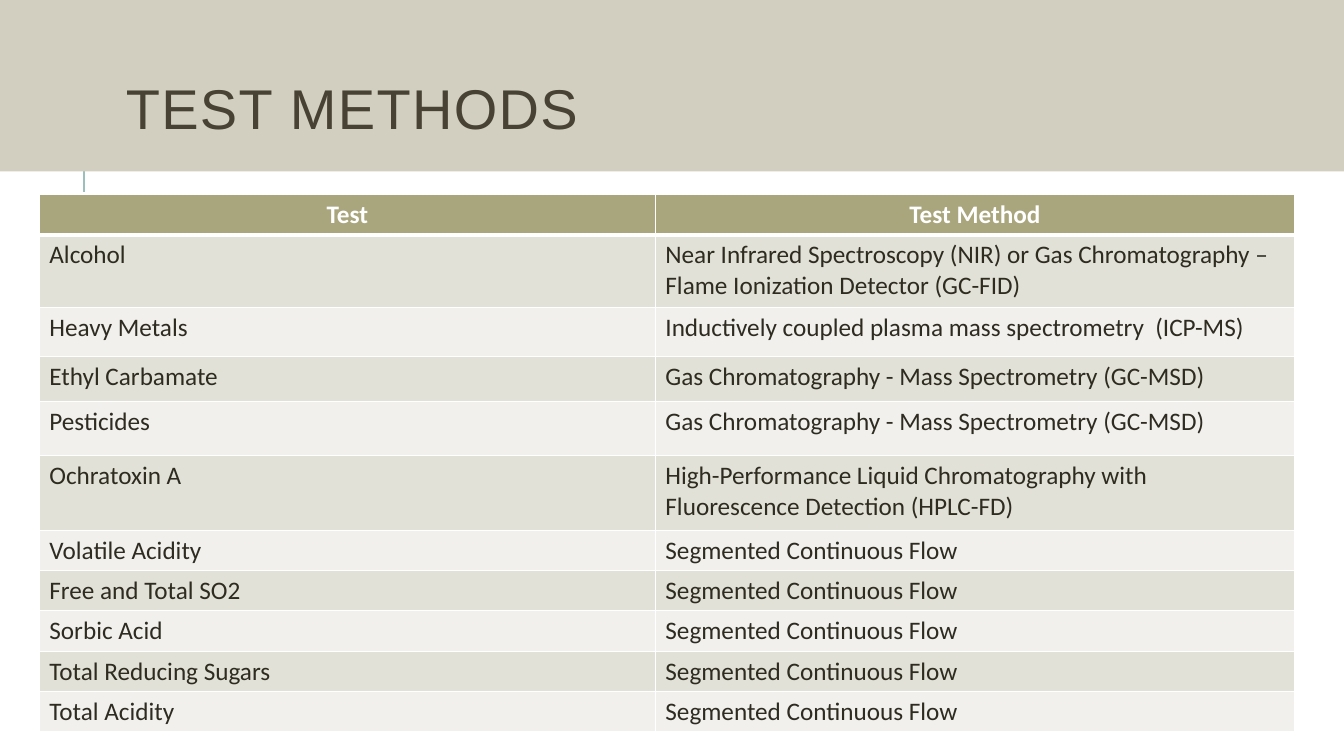
from dataclasses import dataclass
from typing import Any

from lxml import etree
from pptx import Presentation
from pptx import util as u
from pptx.dml import color
from pptx.enum import shapes, text
from pptx.oxml import ns

EMU_PER_PX = 9144


@dataclass(frozen=True)
class Theme:
    band: str = "D2CEC0"
    accent: str = "9CBEBD"
    title: str = "474233"
    header: str = "A9A57C"
    odd_row: str = "E2E1D7"
    even_row: str = "F1F0EC"
    body: str = "2E2B21"
    white: str = "FFFFFF"
    title_font: str = "Arial"
    table_font: str = "Calibri"
    title_size: int = 40
    table_size: int = 18


@dataclass(frozen=True)
class TestMethod:
    test: str
    method: str
    height: int = 40


THEME = Theme()
COLUMN_WIDTHS = (611, 634)
HEADER = TestMethod("Test", "Test Method")
GAS = "Gas Chromatography - Mass Spectrometry (GC-MSD)"
FLOW = "Segmented Continuous Flow"
FLOW_TESTS = (
    "Volatile Acidity",
    "Free and Total SO2",
    "Sorbic Acid",
    "Total Reducing Sugars",
    "Total Acidity",
)
METHODS = (
    TestMethod(
        "Alcohol",
        "Near Infrared Spectroscopy (NIR) or Gas Chromatography – "
        "Flame Ionization Detector (GC-FID)",
        72,
    ),
    TestMethod("Heavy Metals", "Inductively coupled plasma mass spectrometry  (ICP-MS)", 49),
    TestMethod("Ethyl Carbamate", GAS, 44),
    TestMethod("Pesticides", GAS, 54),
    TestMethod(
        "Ochratoxin A",
        "High-Performance Liquid Chromatography with Fluorescence Detection (HPLC-FD)",
        74,
    ),
    *(TestMethod(test, FLOW) for test in FLOW_TESTS),
)


def px(length: int) -> u.Emu:
    return u.Emu(length * EMU_PER_PX)


def rgb(value: str) -> color.RGBColor:
    return color.RGBColor.from_string(value)


def add_span(para: Any, words: str, font: str, size: int, tint: str, bold: bool = False) -> Any:
    span = para.add_run()
    span.text = words
    span.font.name = font
    span.font.size = u.Pt(size)
    span.font.bold = bold
    span.font.color.rgb = rgb(tint)
    return span


def add_accent_line(page: Any) -> None:
    line = page.shapes.add_connector(
        shapes.MSO_CONNECTOR.STRAIGHT, px(83), px(190), px(83), px(90)
    )
    line.line.color.rgb = rgb(THEME.accent)
    line.line.width = u.Pt(1.5)
    properties = line._element.find(ns.qn("p:spPr"))
    etree.SubElement(properties, ns.qn("a:effectLst"))


def add_title_band(page: Any) -> None:
    band = page.shapes.add_shape(
        shapes.MSO_SHAPE.RECTANGLE, px(-10), px(0), px(1343), px(170)
    )
    band.shadow.inherit = False
    band.fill.solid()
    band.fill.fore_color.rgb = rgb(THEME.band)
    band.line.fill.background()


def add_title(page: Any) -> None:
    box = page.shapes.add_textbox(px(115), px(30), px(1063), px(164))
    frame = box.text_frame
    frame.word_wrap = True
    frame.vertical_anchor = text.MSO_ANCHOR.MIDDLE
    para = frame.paragraphs[0]
    para.line_spacing = 0.8
    span = add_span(para, "TEST METHODS", THEME.title_font, THEME.title_size, THEME.title)
    span.font._element.set("spc", "100")


def set_borders(cell: Any, bottom: int) -> None:
    properties = cell._tc.get_or_add_tcPr()
    for side, points in (("L", 1), ("R", 1), ("T", 1), ("B", bottom)):
        edge = etree.SubElement(properties, ns.qn(f"a:ln{side}"), w=str(u.Pt(points)))
        fill = etree.SubElement(edge, ns.qn("a:solidFill"))
        etree.SubElement(fill, ns.qn("a:srgbClr"), val=THEME.white)


def fill_cell(cell: Any, words: str, row: int) -> None:
    is_header = row == 0
    set_borders(cell, 3 if is_header else 1)
    cell.fill.solid()
    banding = THEME.odd_row if row % 2 else THEME.even_row
    cell.fill.fore_color.rgb = rgb(THEME.header if is_header else banding)
    para = cell.text_frame.paragraphs[0]
    para.alignment = text.PP_ALIGN.CENTER if is_header else text.PP_ALIGN.LEFT
    tint = THEME.white if is_header else THEME.body
    add_span(para, words, THEME.table_font, THEME.table_size, tint, is_header)


def add_methods_table(page: Any) -> None:
    records = (HEADER, *METHODS)
    height = sum(record.height for record in records)
    table = page.shapes.add_table(
        len(records), len(COLUMN_WIDTHS), px(39), px(193), px(sum(COLUMN_WIDTHS)), px(height)
    ).table
    table.first_row = False
    table.horz_banding = False
    for column, width in zip(table.columns, COLUMN_WIDTHS):
        column.width = px(width)
    for row, record in enumerate(records):
        table.rows[row].height = px(record.height)
        for column, words in enumerate((record.test, record.method)):
            fill_cell(table.cell(row, column), words, row)


def main() -> None:
    deck = Presentation()
    deck.slide_width, deck.slide_height = px(1333), px(750)
    page = deck.slides.add_slide(deck.slide_layouts[6])
    add_accent_line(page)
    add_title_band(page)
    add_title(page)
    add_methods_table(page)
    deck.save("out.pptx")


if __name__ == "__main__":
    main()
